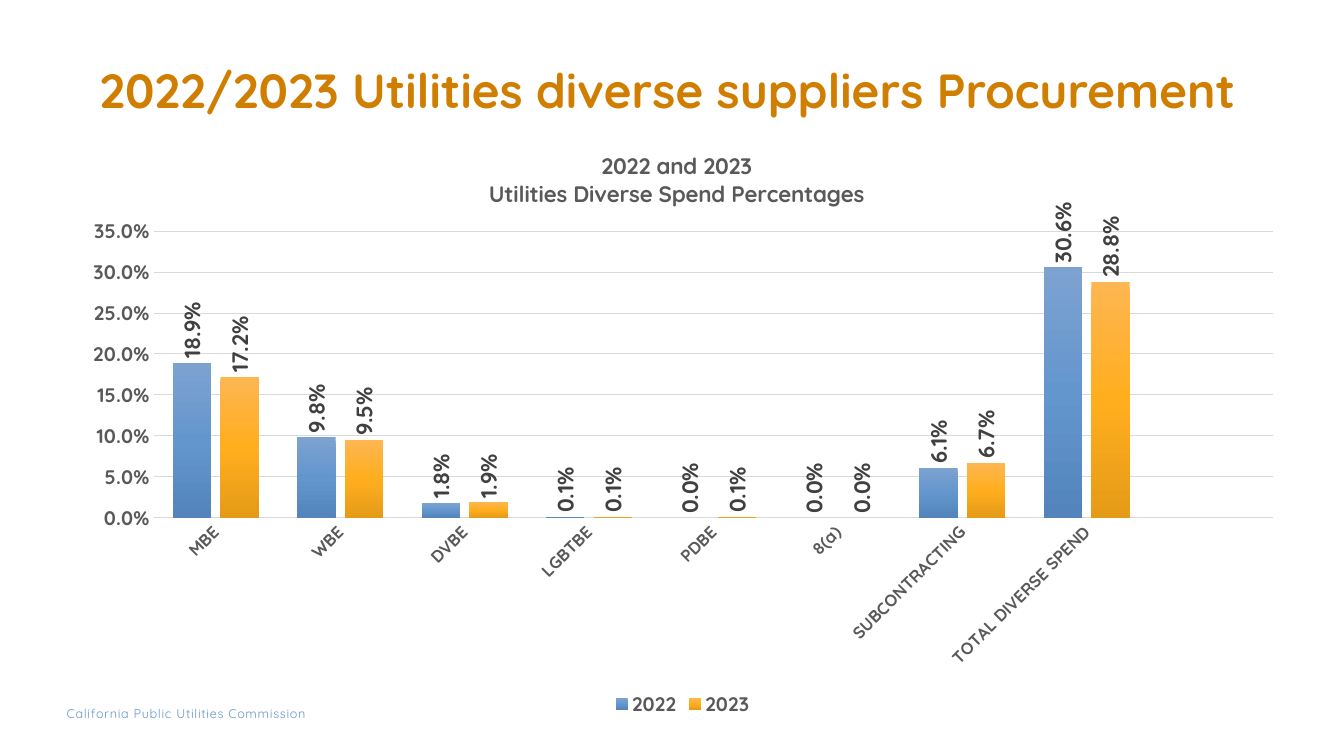
from copy import deepcopy
from dataclasses import dataclass

from lxml.etree import SubElement
from pptx import Presentation
from pptx.chart.data import CategoryChartData
from pptx.dml.color import RGBColor
from pptx.enum.chart import XL_CHART_TYPE, XL_LABEL_POSITION, XL_LEGEND_POSITION, XL_TICK_MARK
from pptx.enum.text import MSO_ANCHOR, MSO_AUTO_SIZE, PP_ALIGN
from pptx.oxml.ns import qn
from pptx.util import Cm, Pt


@dataclass(frozen=True)
class Theme:
    font: str = "Quicksand"
    title: str = "D07E00"
    footer: str = "6996C9"
    text: str = "595959"
    label: str = "404040"
    grid: str = "D9D9D9"
    bars: tuple = (("7CA2D0", "6496CE", "5385BC"), ("FEB651", "FFAE1E", "E59B18"))
    title_size: float = 34.2
    heading_size: int = 16
    axis_size: int = 14
    category_size: int = 12
    footer_size: int = 9


THEME = Theme()
CATEGORIES = ["MBE", "WBE", "DVBE", "LGBTBE", "PDBE", "8(a)",
              "SUBCONTRACTING", "TOTAL DIVERSE SPEND", ""]
SPEND = {
    "2022": [0.189, 0.098, 0.018, 0.001, 0, 0, 0.061, 0.306, None],
    "2023": [0.172, 0.095, 0.019, 0.001, 0.001, 0, 0.067, 0.288, None],
}


def style(font, size, color, bold=True):
    font.name = THEME.font
    font.size = Pt(size)
    font.bold = bold
    font.color.rgb = RGBColor.from_string(color)


def write(tf, text, size, color, bold=True, align=None, line_spacing=None, tracking=None):
    """Fill a text frame with one formatted paragraph per line of text."""
    for i, line in enumerate(text.split("\n")):
        p = tf.add_paragraph() if i else tf.paragraphs[0]
        p.alignment = align
        p.line_spacing = line_spacing
        r = p.add_run()
        r.text = line
        style(r.font, size, color, bold)
        if tracking:
            r.font._element.set("spc", str(int(tracking * 100)))


def set_margins(tf, left, top, right, bottom):
    tf.margin_left, tf.margin_top = Cm(left), Cm(top)
    tf.margin_right, tf.margin_bottom = Cm(right), Cm(bottom)


def place_part(parent, index, **fractions):
    """Give a chart part a manual layout in fractions of the chart."""
    layout = parent.find(qn("c:layout"))
    if layout is not None:
        parent.remove(layout)
    layout = parent.makeelement(qn("c:layout"))
    parent.insert(index, layout)
    manual = SubElement(layout, qn("c:manualLayout"))
    if "w" in fractions:
        SubElement(manual, qn("c:layoutTarget")).set("val", "inner")
    for axis in "xy":
        SubElement(manual, qn(f"c:{axis}Mode")).set("val", "edge")
    for name, value in fractions.items():
        SubElement(manual, qn(f"c:{name}")).set("val", str(value))


def rotate_text(element, degrees):
    body = element.find(qn("c:txPr")).find(qn("a:bodyPr"))
    body.set("rot", str(degrees * 60000))
    body.set("vert", "horz")


def fill_gradient(series, colors):
    fill = series.format.fill
    fill.gradient()
    fill.gradient_angle = 270
    stops = next(series._element.iter(qn("a:gsLst")))
    stops.append(deepcopy(stops[0]))
    for i, (stop, color) in enumerate(zip(fill.gradient_stops, colors)):
        stop.position = i / (len(colors) - 1)
        stop.color.rgb = RGBColor.from_string(color)


def format_axes(chart):
    grid = RGBColor.from_string(THEME.grid)
    cat, val = chart.category_axis, chart.value_axis
    for axis, size in ((cat, THEME.category_size), (val, THEME.axis_size)):
        axis.major_tick_mark = axis.minor_tick_mark = XL_TICK_MARK.NONE
        style(axis.tick_labels.font, size, THEME.text)
    rotate_text(cat._element, -45)
    cat.format.line.color.rgb = grid
    cat.format.line.width = Pt(1)
    val.minimum_scale, val.maximum_scale, val.major_unit = 0, 0.35, 0.05
    val.tick_labels.number_format = "0.0%"
    val.tick_labels.number_format_is_linked = False
    val.format.line.fill.background()
    val.major_gridlines.format.line.color.rgb = grid
    val.major_gridlines.format.line.width = Pt(0.75)


def format_series(series, colors):
    series.invert_if_negative = False
    fill_gradient(series, colors)
    labels = series.data_labels
    labels.show_value = True
    labels.position = XL_LABEL_POSITION.OUTSIDE_END
    labels.number_format = "0.0%"
    labels.number_format_is_linked = False
    style(labels.font, THEME.heading_size, THEME.label)
    rotate_text(labels._element, -90)


def add_title(slide, left, top, width, height):
    sp = slide.shapes.title
    sp.left, sp.top, sp.width, sp.height = Cm(left), Cm(top), Cm(width), Cm(height)
    tf = sp.text_frame
    tf.word_wrap = True
    tf.auto_size = MSO_AUTO_SIZE.NONE
    tf.vertical_anchor = MSO_ANCHOR.BOTTOM
    set_margins(tf, 0, 0.13, 0.25, 0.13)
    write(tf, "2022/2023 Utilities diverse suppliers Procurement", THEME.title_size,
          THEME.title, align=PP_ALIGN.CENTER, line_spacing=0.9)


def add_spend_chart(slide, left, top, width, height):
    data = CategoryChartData(number_format="0.0%")
    data.categories = CATEGORIES
    for year, values in SPEND.items():
        data.add_series(year, values)
    chart = slide.shapes.add_chart(XL_CHART_TYPE.COLUMN_CLUSTERED, Cm(left), Cm(top),
                                   Cm(width), Cm(height), data).chart
    style(chart.font, THEME.category_size, THEME.text)

    write(chart.chart_title.text_frame, "2022 and 2023\nUtilities Diverse Spend Percentages",
          THEME.heading_size, THEME.text, align=PP_ALIGN.CENTER)
    place_part(chart.chart_title._element, 1, x=0.34, y=0.04)
    place_part(chart._chartSpace.chart.plotArea, 0, x=0.07, y=0.18, w=0.91, h=0.48)

    chart.has_legend = True
    chart.legend.position = XL_LEGEND_POSITION.BOTTOM
    chart.legend.include_in_layout = False
    style(chart.legend.font, THEME.axis_size, THEME.text)

    plot = chart.plots[0]
    plot.gap_width, plot.overlap = 100, -24
    plot.vary_by_categories = False
    format_axes(chart)
    for series, colors in zip(plot.series, THEME.bars):
        format_series(series, colors)


def add_footer(slide, left, top, width, height):
    tf = slide.shapes.add_textbox(Cm(left), Cm(top), Cm(width), Cm(height)).text_frame
    tf.word_wrap = True
    set_margins(tf, 0, 0, 0, 0)
    write(tf, "California Public Utilities Commission", THEME.footer_size, THEME.footer,
          bold=False, tracking=0.5)


def main():
    prs = Presentation()
    prs.slide_width, prs.slide_height = Cm(33.87), Cm(19.05)
    slide = prs.slides.add_slide(prs.slide_layouts[5])
    add_footer(slide, 1.68, 17.78, 8.15, 0.38)
    add_title(slide, 1.7, 0.89, 30.48, 2.24)
    add_spend_chart(slide, 1.7, 3.12, 31.01, 15.04)
    prs.save("out.pptx")


if __name__ == "__main__":
    main()
